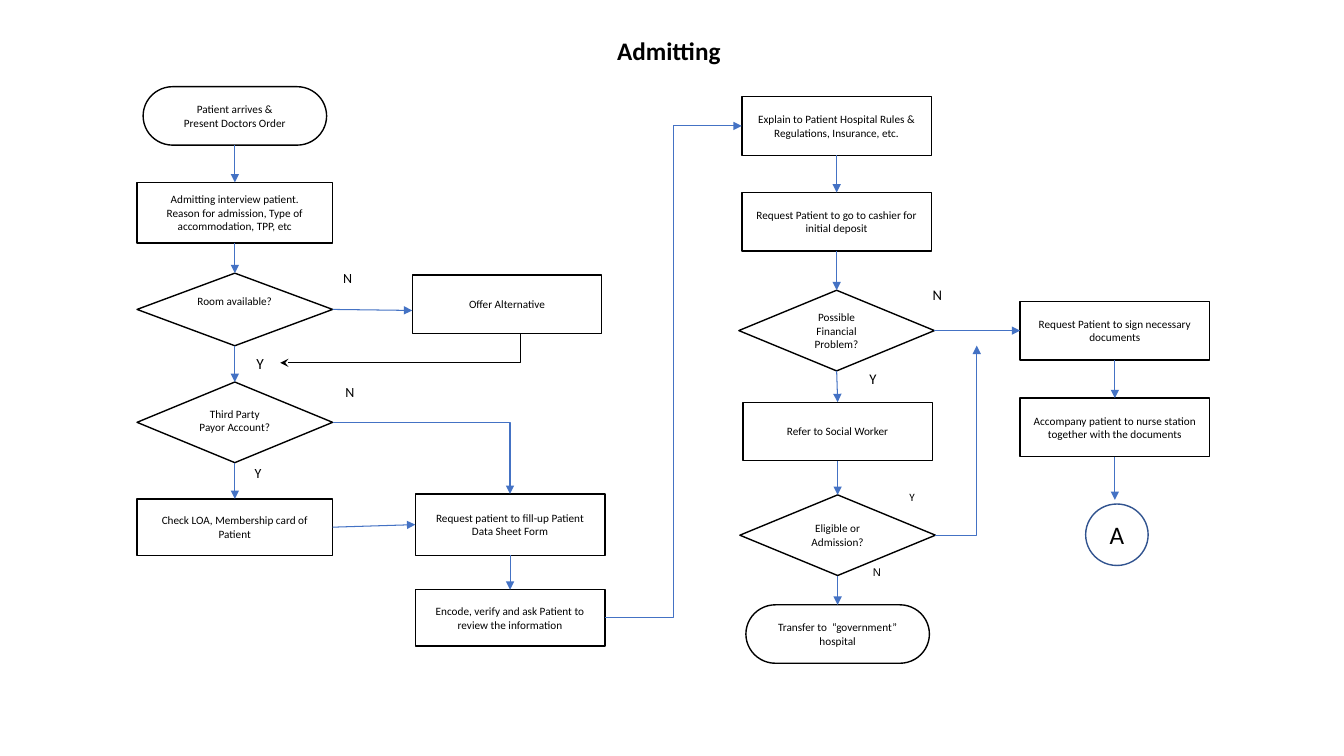
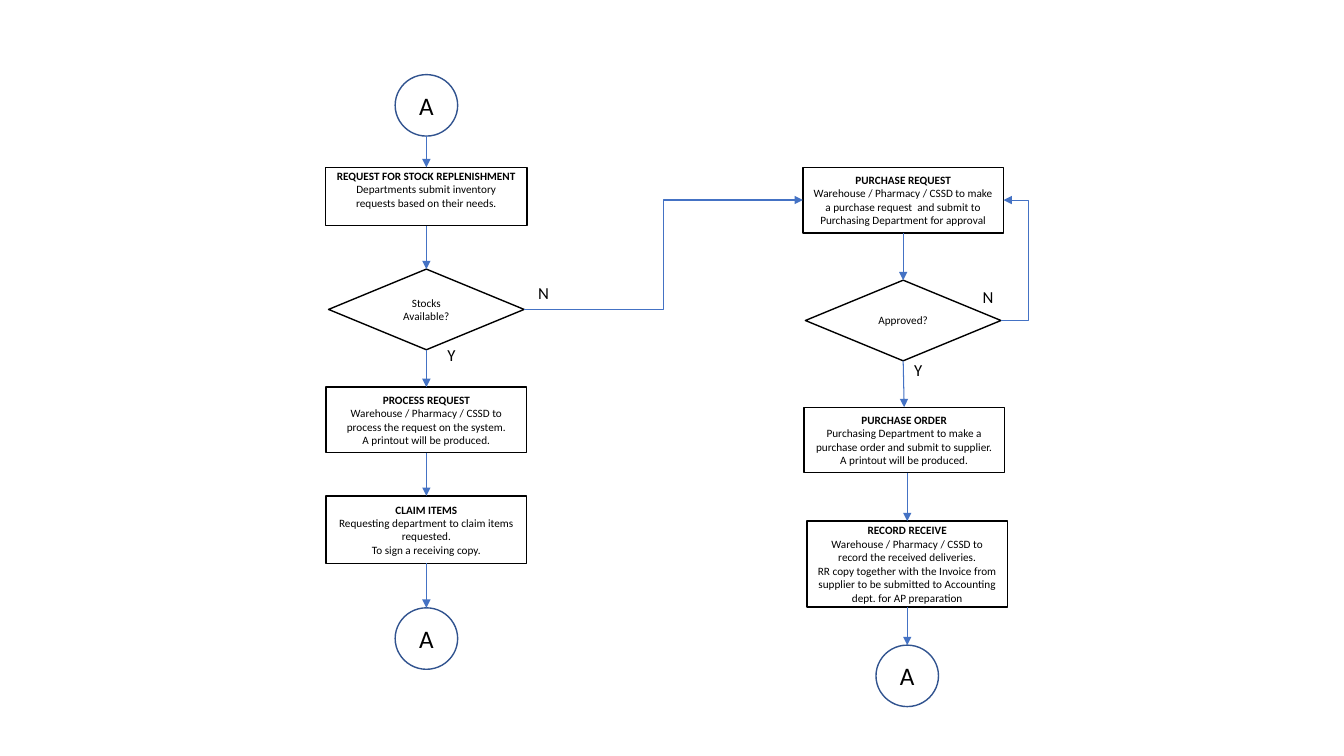
from dataclasses import dataclass

from lxml.etree import SubElement
from pptx import Presentation
from pptx.dml.color import RGBColor
from pptx.enum.shapes import MSO_CONNECTOR, MSO_SHAPE
from pptx.enum.text import MSO_ANCHOR, MSO_AUTO_SIZE, PP_ALIGN
from pptx.oxml.ns import qn
from pptx.util import Inches, Pt

BLACK = RGBColor(0x00, 0x00, 0x00)
WHITE = RGBColor(0xFF, 0xFF, 0xFF)
ARROW_BLUE = RGBColor(0x44, 0x72, 0xC4)
CIRCLE_BLUE = RGBColor(0x31, 0x53, 0x8F)
FONT = "Calibri"

# All positions and sizes are in grid cells of a tenth of an inch.
CELL = Inches(0.1)
SLIDE_COLUMNS, SLIDE_ROWS = 133.33, 75
TOP, LEFT, BOTTOM, RIGHT = range(4)
TITLE_ONLY, BLANK = 5, 6


@dataclass
class Kind:
    preset: MSO_SHAPE
    width: float
    height: float
    size: int = 8
    line: RGBColor = BLACK


PROCESS = Kind(MSO_SHAPE.FLOWCHART_PROCESS, 18.8, 5.8)
INTAKE = Kind(MSO_SHAPE.FLOWCHART_PROCESS, 19.4, 6)
SUPPLY = Kind(MSO_SHAPE.FLOWCHART_PROCESS, 19.9, 6.5)
DECISION = Kind(MSO_SHAPE.FLOWCHART_DECISION, 19.4, 8)
TERMINATOR = Kind(MSO_SHAPE.FLOWCHART_TERMINATOR, 18.2, 5.8)
CIRCLE = Kind(MSO_SHAPE.FLOWCHART_CONNECTOR, 6.2, 6.1, 18, CIRCLE_BLUE)


def cells(*counts):
    return [round(count * CELL) for count in counts]


def write(frame, lines, size, heading=False, font=FONT, align=PP_ALIGN.CENTER):
    """Fill a text frame, one paragraph per line; a heading is a bold first line."""
    frame.word_wrap = True
    for index, line in enumerate(lines):
        paragraph = frame.paragraphs[0] if index == 0 else frame.add_paragraph()
        paragraph.alignment = align
        run = paragraph.add_run()
        run.text = line
        run.font.name = font
        run.font.size = Pt(size)
        run.font.bold = heading and index == 0
        run.font.color.rgb = BLACK


def site_point(shape, site):
    across = {LEFT: 0, RIGHT: 1}.get(site, 0.5)
    down = {TOP: 0, BOTTOM: 1}.get(site, 0.5)
    return (round(shape.left + across * shape.width),
            round(shape.top + down * shape.height))


def connect(slide, start, end, route="straight", bend=None, color=ARROW_BLUE, head="triangle"):
    """Draw an arrow; each end is a (shape, site) pair or a (column, row) point.

    route is straight, corner (one turn) or elbow (two turns, at column bend).
    """
    ends = [(point, None) if isinstance(point[0], (int, float)) else (site_point(*point), point)
            for point in (start, end)]
    (x1, y1), (x2, y2) = [tuple(point) if joint else tuple(cells(*point))
                          for point, joint in ends]
    kind = MSO_CONNECTOR.STRAIGHT if route == "straight" else MSO_CONNECTOR.ELBOW
    connector = slide.shapes.add_connector(kind, x1, y1, x2, y2)
    joins = (connector.begin_connect, connector.end_connect)
    for join, (_, joint) in zip(joins, ends):
        round_bottom = joint and joint[1] != TOP and (
            joint[0].auto_shape_type == CIRCLE.preset)
        if joint and not round_bottom:
            join(*joint)
    connector.line.color.rgb = color
    connector.line.width = Pt(0.75)
    properties = connector._element.spPr
    SubElement(properties.find(qn("a:ln")), qn("a:tailEnd"), type=head)
    SubElement(properties, qn("a:effectLst"))
    geometry = properties.find(qn("a:prstGeom"))
    if route == "corner":
        geometry.set("prst", "bentConnector2")
    if bend is not None:
        share = round((cells(bend)[0] - x1) / (x2 - x1) * 100000)
        SubElement(geometry.find(qn("a:avLst")), qn("a:gd"), name="adj1", fmla=f"val {share}")


def connect_down(slide, *shapes):
    for upper, lower in zip(shapes, shapes[1:]):
        connect(slide, (upper, BOTTOM), (lower, TOP))


@dataclass
class Region:
    """A part of a slide; its members are placed from its top left corner."""
    slide: object
    left: float
    top: float

    def at(self, column, row):
        return self.left + column, self.top + row

    def step(self, kind, centre, row, *lines, width=None, height=None,
             heading=False, top_inset=None):
        width, height = width or kind.width, height or kind.height
        shape = self.slide.shapes.add_shape(
            kind.preset, *cells(*self.at(centre - width / 2, row), width, height))
        shape.shadow.inherit = False
        shape.fill.solid()
        shape.fill.fore_color.rgb = WHITE
        shape.line.color.rgb = kind.line
        shape.line.width = Pt(1)
        frame = shape.text_frame
        frame.vertical_anchor = MSO_ANCHOR.MIDDLE
        if top_inset is not None:
            frame.vertical_anchor = MSO_ANCHOR.TOP
            frame.margin_top = Inches(top_inset)
        write(frame, lines, kind.size, heading)
        return shape

    def label(self, column, row, text, size=10, height=2.2, font=FONT, align=PP_ALIGN.CENTER):
        box = self.slide.shapes.add_textbox(*cells(*self.at(column, row), 4, height))
        box.text_frame.vertical_anchor = MSO_ANCHOR.MIDDLE
        write(box.text_frame, [text], size, font=font, align=align)


def admitting_intake(region):
    """Arrival to data sheet; returns the last step."""
    slide, main, side = region.slide, 9.7, 37
    connect(slide, region.at(28.4, 22.1), region.at(14.2, 27.4), "elbow",
            bend=region.left + 38, color=BLACK, head="stealth")
    arrival = region.step(TERMINATOR, main, 0, "Patient arrives &", "Present Doctors Order")
    interview = region.step(INTAKE, main, 9.5, "Admitting interview patient.",
                            "Reason for admission, Type of accommodation, TPP, etc")
    room = region.step(DECISION, main, 18.5, "Room available?", height=7.2, top_inset=0.03)
    payor = region.step(DECISION, main, 29.3, "Third Party Payor Account?", top_inset=0.05)
    card = region.step(INTAKE, main, 40.9, "Check LOA, Membership card of Patient", height=5.6)
    region.step(PROCESS, 36.7, 18.7, "Offer Alternative")
    form = region.step(PROCESS, side, 40.4,
                       "Request patient to fill-up Patient Data Sheet Form", height=6.1)
    encode = region.step(PROCESS, side, 49.9,
                         "Encode, verify and ask Patient to review the information", height=5.6)
    connect_down(slide, arrival, interview, room, payor, card)
    connect_down(slide, form, encode)
    connect(slide, (room, RIGHT), region.at(27.3, 22.2))
    connect(slide, (payor, RIGHT), (form, TOP), "corner")
    connect(slide, (card, RIGHT), (form, LEFT))
    region.label(18.9, 17.9, "N")
    region.label(10.2, 25.7, "Y", size=11, height=3.6)
    region.label(19.1, 29.2, "N")
    region.label(10, 37.1, "Y", height=2.5)
    return encode


def admitting_finance(region):
    """Rules to social worker; returns the first step and the financial decision."""
    slide, main = region.slide, 9.7
    rules = region.step(PROCESS, main, 0,
                        "Explain to Patient Hospital Rules & Regulations, Insurance, etc.")
    cashier = region.step(PROCESS, main, 9.5,
                          "Request Patient to go to cashier for initial deposit")
    problem = region.step(DECISION, main, 19.2, "Possible Financial Problem?")
    worker = region.step(PROCESS, 9.8, 30.3, "Refer to Social Worker")
    eligible = region.step(DECISION, 9.8, 39.5, "Eligible or Admission?")
    transfer = region.step(TERMINATOR, 9.8, 50.4, "Transfer to  “government” hospital")
    connect_down(slide, rules, cashier, problem, worker, eligible, transfer)
    connect(slide, (eligible, RIGHT), region.at(23.6, 24.7), "corner")
    region.label(17.7, 17.7, "N", size=10.5, height=3.9)
    region.label(11.3, 26.6, "Y", size=10.5, height=2.8)
    region.label(15.2, 38.6, "Y", size=8)
    region.label(11.7, 46, "N", size=8, font="Arial")
    return rules, problem


def admitting_handover(region):
    """Signing to nurse station; returns the first step."""
    main = 9.4
    sign = region.step(PROCESS, main, 0, "Request Patient to sign necessary documents")
    nurse = region.step(PROCESS, main, 9.6, "Accompany patient to nurse station",
                        "together with the documents")
    region.step(CIRCLE, 9.6, 20.1, "A")
    connect_down(region.slide, sign, nurse)
    connect(region.slide, (nurse, BOTTOM), region.at(main, 19.7))
    return sign


def stock_replenishment(region):
    """Request to claim; returns the stock decision."""
    main = 10
    entry = region.step(CIRCLE, main, 0, "A")
    request = region.step(SUPPLY, main, 9.2, "REQUEST FOR STOCK REPLENISHMENT",
                          "Departments submit inventory requests based on their needs.",
                          width=20, height=5.8, heading=True, top_inset=0.02)
    stocks = region.step(DECISION, main, 19.3, "Stocks", "Available?")
    process = region.step(SUPPLY, main, 31, "PROCESS REQUEST",
                          "Warehouse / Pharmacy / CSSD to process the request on the system.",
                          "A printout will be produced.", heading=True)
    claim = region.step(SUPPLY, main, 41.8, "CLAIM ITEMS",
                        "Requesting department to claim items requested.",
                        "To sign a receiving copy.", height=6.7, heading=True)
    onward = region.step(CIRCLE, main, 52.9, "A")
    connect_down(region.slide, entry, request, stocks, process, claim, onward)
    region.label(20.1, 20.2, "N", size=12, height=3, align=PP_ALIGN.LEFT)
    region.label(11.1, 26.3, "Y", size=12, height=3, align=PP_ALIGN.LEFT)
    return stocks


def purchasing(region):
    """Purchase request to receipt; returns the first step."""
    slide, main, receipt = region.slide, 10, 10.4
    request = region.step(SUPPLY, main, 0, "PURCHASE REQUEST",
                          "Warehouse / Pharmacy / CSSD to make a purchase request  and submit "
                          "to Purchasing Department for approval", heading=True)
    approved = region.step(DECISION, main, 11.2, "Approved?")
    order = region.step(SUPPLY, main + 0.1, 23.8, "PURCHASE ORDER",
                        "Purchasing Department to make a purchase order and submit to supplier.",
                        "A printout will be produced.", heading=True)
    receive = region.step(SUPPLY, receipt, 35.1, "RECORD RECEIVE",
                          "Warehouse / Pharmacy / CSSD to record the received deliveries.",
                          "RR copy together with the Invoice from supplier to be submitted "
                          "to Accounting dept. for AP preparation", height=8.5, heading=True)
    onward = region.step(CIRCLE, receipt, 47.4, "A")
    connect_down(slide, request, approved, order)
    connect(slide, region.at(receipt, 30.3), (receive, TOP))
    connect_down(slide, receive, onward)
    connect(slide, (approved, RIGHT), (request, RIGHT), "elbow", bend=region.left + 22.4)
    region.label(16.9, 11.3, "N", size=12, height=3, align=PP_ALIGN.LEFT)
    region.label(10.1, 18.6, "Y", size=12, height=3, align=PP_ALIGN.LEFT)
    return request


def set_title(slide, text):
    title = slide.shapes.title
    title.left, title.top, title.width, title.height = cells(12.5, 3, 107.7, 4)
    title.text_frame.auto_size = MSO_AUTO_SIZE.NONE
    title.text_frame.vertical_anchor = MSO_ANCHOR.TOP
    write(title.text_frame, [text], 18, heading=True)


def admitting_slide(presentation):
    slide = presentation.slides.add_slide(presentation.slide_layouts[TITLE_ONLY])
    set_title(slide, "Admitting")
    encode = admitting_intake(Region(slide, 13.6, 8.6))
    rules, problem = admitting_finance(Region(slide, 73.3, 9.6))
    sign = admitting_handover(Region(slide, 101.2, 29.9))
    connect(slide, (encode, RIGHT), (rules, LEFT), "elbow")
    connect(slide, (problem, RIGHT), (sign, LEFT))


def supply_slide(presentation):
    slide = presentation.slides.add_slide(presentation.slide_layouts[BLANK])
    stocks = stock_replenishment(Region(slide, 32.3, 7.4))
    request = purchasing(Region(slide, 79.6, 16.6))
    connect(slide, (stocks, RIGHT), (request, LEFT), "elbow")


def main():
    presentation = Presentation()
    presentation.slide_width, presentation.slide_height = cells(SLIDE_COLUMNS, SLIDE_ROWS)
    admitting_slide(presentation)
    supply_slide(presentation)
    presentation.save("out.pptx")


if __name__ == "__main__":
    main()
